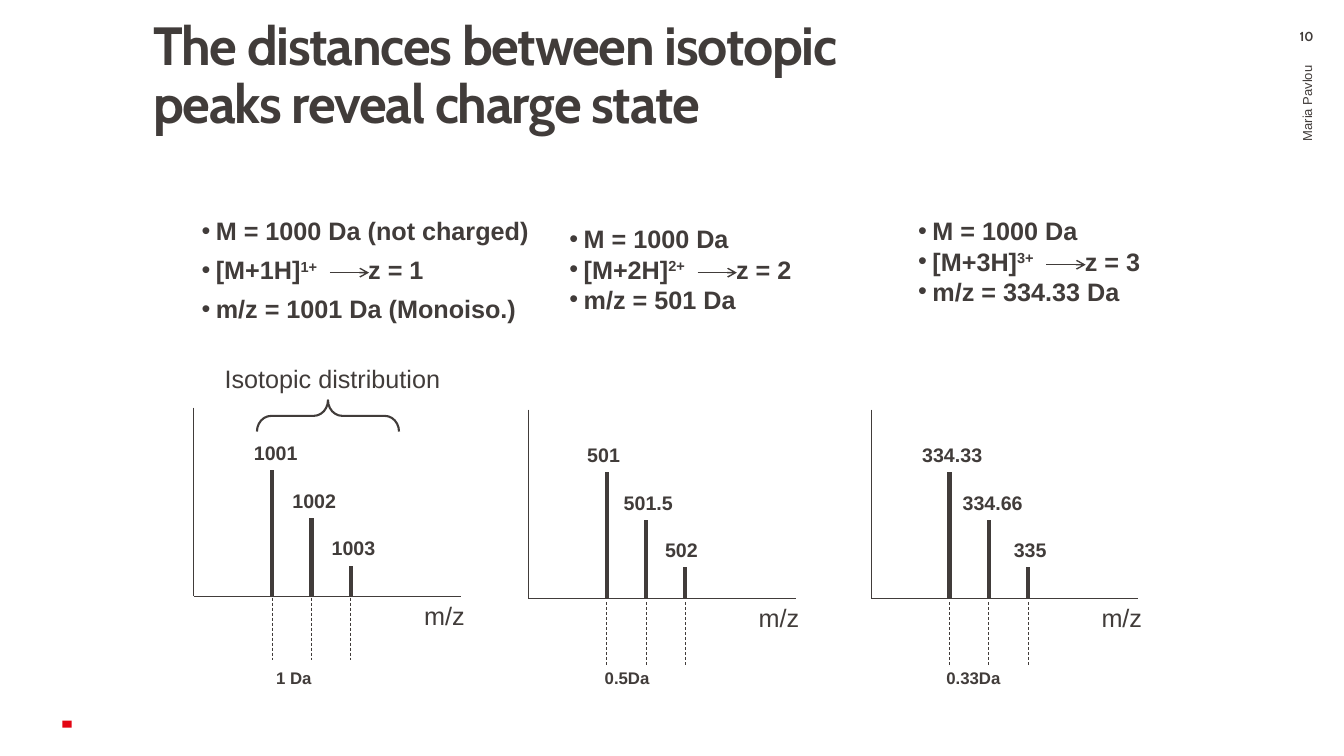
from lxml.etree import SubElement
from pptx import Presentation
from pptx.dml.color import RGBColor
from pptx.enum.dml import MSO_LINE_DASH_STYLE as Dash
from pptx.enum.shapes import MSO_CONNECTOR as Connector, MSO_SHAPE as Shape
from pptx.enum.text import MSO_ANCHOR as Anchor, PP_ALIGN as Align
from pptx.oxml.ns import qn
from pptx.util import Cm, Pt

rgb = RGBColor.from_string
INK = "413C3A"
RED = "E30613"

deck = Presentation()
deck.slide_width, deck.slide_height = Cm(33.87), Cm(19.05)
page = deck.slides.add_slide(deck.slide_layouts[6])


def add_text(area, paragraphs, size, bold=False, font="Arial", bullet=False):
    box = page.shapes.add_textbox(*[Cm(length) for length in area])
    frame = box.text_frame
    frame.word_wrap = True
    for index, runs in enumerate(paragraphs):
        para = frame.paragraphs[0] if index == 0 else frame.add_paragraph()
        if bullet:
            props = para._p.get_or_add_pPr()
            props.set("marL", str(Cm(0.36)))
            props.set("indent", str(-Cm(0.36)))
            SubElement(props, qn("a:buFont")).set("typeface", "Arial")
            SubElement(props, qn("a:buChar")).set("char", "•")
            stops = SubElement(props, qn("a:tabLst"))
            stop = SubElement(stops, qn("a:tab"))
            stop.set("pos", str(Cm(4.2)))
            stop.set("algn", "l")
        para.font.size = Pt(size)
        for text, baseline in runs:
            span = para.add_run()
            span.text = text
            span.font.size, span.font.bold, span.font.name = Pt(size), bold, font
            span.font.color.rgb = rgb(INK)
            if baseline:
                span.font._element.set("baseline", str(baseline))
    return box


def add_line(start_x, start_y, end_x, end_y, weight):
    line = page.shapes.add_connector(
        Connector.STRAIGHT, Cm(start_x), Cm(start_y), Cm(end_x), Cm(end_y))
    line.line.color.rgb = rgb(INK)
    line.line.width = Pt(weight)
    SubElement(line._element.spPr, qn("a:effectLst"))
    return line


marker = page.shapes.add_shape(Shape.RECTANGLE, Cm(1.57), Cm(18.16), Cm(0.24), Cm(0.18))
marker.shadow.inherit = False
marker.fill.solid()
marker.fill.fore_color.rgb = rgb(RED)
marker.line.fill.background()

title = add_text(
    (3.35, 0.48, 22.58, 3.96),
    [[("The distances between isotopic", 0)], [("peaks reveal charge state", 0)]],
    38.4, True, "Cabin")
title.text_frame.margin_left, title.text_frame.margin_top = Cm(0.51), 0
for para in title.text_frame.paragraphs:
    para.line_spacing = 0.9
    para.runs[0].font._element.set("spc", "-90")

author = add_text((26.37, 7.02, 13.13, 1.9), [[("Maria Pavlou", 0)]], 9.3)
author.rotation = 270
author.text_frame.vertical_anchor = Anchor.MIDDLE
author.text_frame.paragraphs[0].alignment = Align.RIGHT

number = add_text((31.98, 0.71, 1.9, 0.61), [[("10", 0)]], 9.3, True, "Cabin")
number.text_frame.margin_top = number.text_frame.margin_bottom = 0
number.text_frame.paragraphs[0].alignment = Align.CENTER

ion_boxes = [
    (4.83, 5.31, 9.1, [[("M = 1000 Da (not charged)", 0)]]),
    (4.83, 6.29, 6.9, [[("[M+1H]", 0), ("1+", 30000), ("\tz = 1", 0)]]),
    (4.83, 7.27, 9.1, [[("m/z = 1001 Da (Monoiso.)", 0)]]),
]
for left, top, charge, mass in [(14.1, 5.51, 2, "501"), (22.89, 5.31, 3, "334.33")]:
    ion_boxes.append((left, top, 6.9, [
        [("M = 1000 Da", 0)],
        [(f"[M+{charge}H]", 0), (f"{charge}+", 30000), (f"\tz = {charge}", 0)],
        [(f"m/z = {mass} Da", 0)],
    ]))

for left, top, width, rows in ion_boxes:
    add_text((left, top, width, 0.25 + 0.77 * len(rows)), rows, 18, True, bullet=True)
    for index, runs in enumerate(rows):
        if len(runs) > 1:
            arrow_y = top + 0.58 + 0.78 * index
            arrow = add_line(left + 3.48, arrow_y, left + 4.47, arrow_y, 1)
            SubElement(arrow.line._get_or_add_ln(), qn("a:tailEnd")).set("type", "arrow")

add_text((5.41, 9.02, 6.1, 1.02), [[("Isotopic distribution", 0)]], 18)
brace = page.shapes.add_shape(Shape.LEFT_BRACE, Cm(7.87), Cm(8.69), Cm(0.79), Cm(3.58))
brace.rotation = 90
brace.adjustments[0] = 0.455
brace.shadow.inherit = False
brace.fill.background()
brace.line.color.rgb = rgb(INK)
brace.line.width = Pt(1.5)

spectra = [
    (4.88, 15.03, 0.03, [("1001", 1.27), ("1002", 2.24), ("1003", 3.23)], ("1 Da", 1.83)),
    (13.31, 15.08, 0.1, [("501", 1.24), ("501.5", 2.16), ("502", 3.2)], ("0.5Da", 1.68)),
    (21.95, 15.08, 0.1, [("334.33", 1.04), ("334.66", 2.06), ("335", 3.35)],
     ("0.33Da", 1.65)),
]
for origin, base, gap, peaks, (distance, distance_offset) in spectra:
    add_line(origin, base - 4.76, origin, base, 0.5)
    add_line(origin, base, origin + 6.74, base, 0.5)
    add_text((origin + 5.56, base - 0.02, 1.6, 1.02), [[("m/z", 0)]], 18)
    for index, (mass, label_offset) in enumerate(peaks):
        peak_x = origin + 1.98 + 0.99 * index
        peak_top = base - 3.18 + 1.2 * index
        add_line(peak_x, base, peak_x, peak_top, 3)
        add_text((origin + label_offset, peak_top - 0.86, 0.54 + 0.28 * len(mass), 0.86),
                 [[(mass, 0)]], 14, True)
        guide = add_line(peak_x, base + gap, peak_x, base + gap + 1.58, 0.5)
        guide.line.dash_style = Dash.DASH
    add_text((origin + distance_offset, 16.69, 0.54 + 0.24 * len(distance), 0.77),
             [[(distance, 0)]], 12, True)

deck.save("out.pptx")
